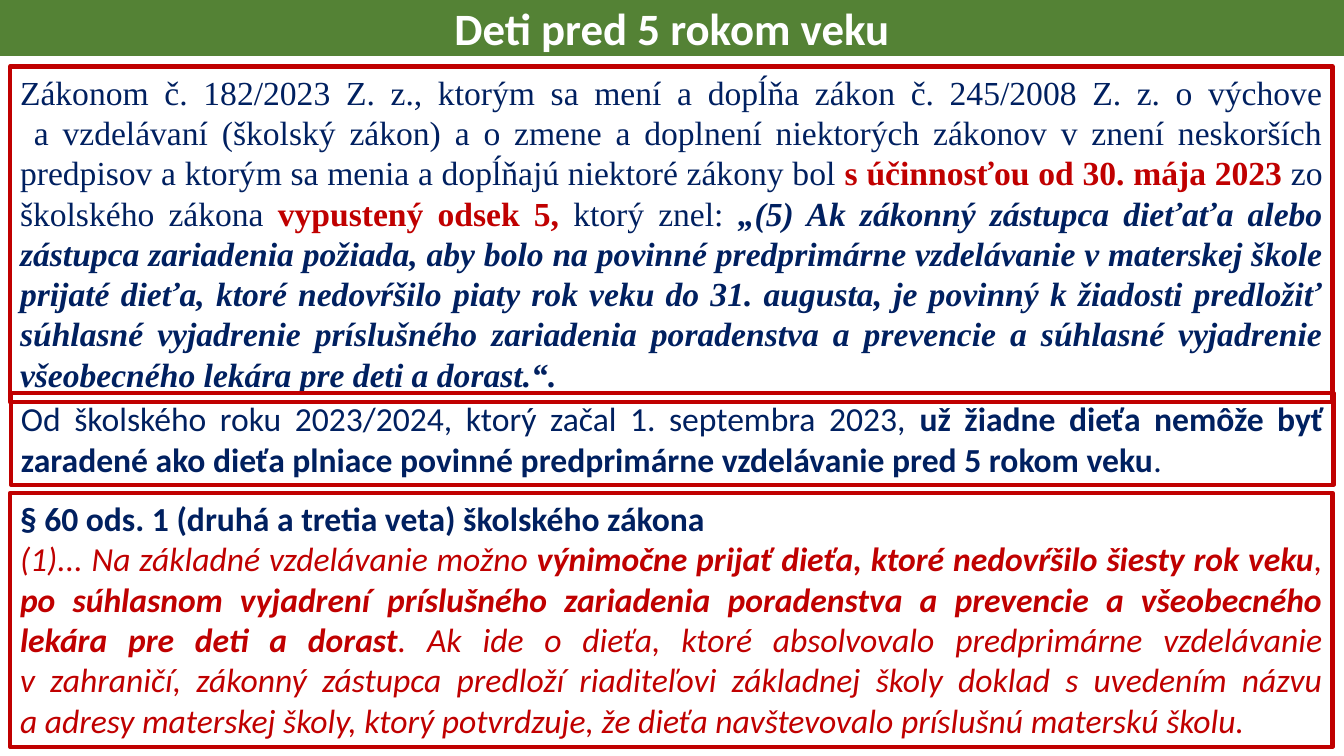
from dataclasses import dataclass

from pptx import Presentation
from pptx import util as u
from pptx.dml.color import RGBColor
from pptx.enum import text
from pptx.slide import Slide

COLORS = {"green": "548235", "red": "C00000", "navy": "002060", "white": "FFFFFF"}

# Character formats: values for the font attributes
PLAIN = {"bold": False, "italic": False}
BOLD = {"bold": True, "italic": False}
ITALIC = {"bold": False, "italic": True}
BOLD_ITALIC = {"bold": True, "italic": True}


@dataclass
class Passage:
    wording: str  # a newline stands for a line break
    color: str
    style: dict


@dataclass
class Panel:
    left: float
    top: float
    width: float
    height: float
    paragraphs: list[list[Passage]]
    font: str = "Calibri"
    size: float = 24
    align: text.PP_ALIGN = text.PP_ALIGN.JUSTIFY
    line: str = "red"
    line_width: float = 3
    fill: str | None = None
    side_inset: float = 7.2
    end_inset: float = 3.6


TITLE = Panel(
    -0.5, 0.7, 961, 38.9,
    [[Passage("Deti pred 5 rokom veku", "white", BOLD)]],
    size=32, align=text.PP_ALIGN.CENTER, line="green", line_width=0.75,
    fill="green", side_inset=5.76, end_inset=0,
)

AMENDMENT = Panel(
    7.2, 47.5, 944.6, 239.8,
    [[
        Passage("Zákonom č. 182/2023 Z. z., ktorým sa mení a dopĺňa zákon č. 245/2008 Z. z. "
                "o výchove\n a vzdelávaní (školský zákon) a o zmene a doplnení niektorých "
                "zákonov v znení neskorších predpisov a ktorým sa menia a dopĺňajú "
                "niektoré zákony bol ", "navy", PLAIN),
        Passage("s účinnosťou od 30. mája 2023 ", "red", BOLD),
        Passage("zo školského zákona ", "navy", PLAIN),
        Passage("vypustený odsek 5, ", "red", BOLD),
        Passage("ktorý znel: ", "navy", PLAIN),
        Passage("„(5) Ak zákonný zástupca dieťaťa alebo zástupca zariadenia požiada, aby bolo "
                "na povinné predprimárne vzdelávanie v materskej škole prijaté dieťa, ktoré "
                "nedovŕšilo piaty rok veku do 31. augusta, je povinný k žiadosti predložiť "
                "súhlasné vyjadrenie príslušného zariadenia poradenstva a prevencie a súhlasné "
                "vyjadrenie všeobecného lekára pre deti a dorast.“.", "navy", BOLD_ITALIC),
    ]],
    font="Times New Roman",
)

CONSEQUENCE = Panel(
    7.9, 280.8, 944.6, 65.5,
    [[
        Passage("Od školského roku 2023/2024, ktorý začal 1. septembra 2023, ", "navy", PLAIN),
        Passage("už žiadne dieťa nemôže byť zaradené ako dieťa plniace povinné predprimárne "
                "vzdelávanie pred 5 rokom veku", "navy", BOLD),
        Passage(".", "navy", PLAIN),
    ]],
)

SECTION_60 = Panel(
    7.2, 352.1, 944.6, 181.4,
    [
        [Passage("§ 60 ods. 1 (druhá a tretia veta) školského zákona", "navy", BOLD)],
        [
            Passage("(1)... Na základné vzdelávanie možno ", "red", ITALIC),
            Passage("výnimočne prijať dieťa, ktoré nedovŕšilo šiesty rok veku",
                    "red", BOLD_ITALIC),
            Passage(", ", "red", ITALIC),
            Passage("po súhlasnom vyjadrení príslušného zariadenia poradenstva a prevencie "
                    "a všeobecného lekára pre deti a dorast", "red", BOLD_ITALIC),
            Passage(". Ak ide o dieťa, ktoré absolvovalo predprimárne vzdelávanie\n"
                    "v zahraničí, zákonný zástupca predloží riaditeľovi základnej školy doklad "
                    "s uvedením názvu\na adresy materskej školy, ktorý potvrdzuje, že dieťa "
                    "navštevovalo príslušnú materskú školu.", "red", ITALIC),
        ],
    ],
)


def rgb(name: str) -> RGBColor:
    return RGBColor.from_string(COLORS[name])


def set_attributes(target, values: dict) -> None:
    for name, value in values.items():
        setattr(target, name, value)


def add_passage(paragraph, passage: Passage, panel: Panel) -> None:
    for index, wording in enumerate(passage.wording.split("\n")):
        if index:
            paragraph.add_line_break()
        run = paragraph.add_run()
        run.text = wording
        font_format = {"name": panel.font, "size": u.Pt(panel.size), **passage.style}
        set_attributes(run.font, font_format)
        run.font.color.rgb = rgb(passage.color)


def add_panel(slide: Slide, panel: Panel) -> None:
    bounds = (panel.left, panel.top, panel.width, panel.height)
    shape = slide.shapes.add_textbox(*(u.Pt(length) for length in bounds))

    # Outline and background
    shape.line.color.rgb = rgb(panel.line)
    shape.line.width = u.Pt(panel.line_width)
    if panel.fill:
        shape.fill.solid()
        shape.fill.fore_color.rgb = rgb(panel.fill)

    # Text
    frame = shape.text_frame
    set_attributes(frame, {
        "word_wrap": True,
        "auto_size": text.MSO_AUTO_SIZE.SHAPE_TO_FIT_TEXT,
        "vertical_anchor": text.MSO_ANCHOR.TOP,
        "margin_left": u.Pt(panel.side_inset),
        "margin_right": u.Pt(panel.side_inset),
        "margin_top": u.Pt(panel.end_inset),
        "margin_bottom": u.Pt(panel.end_inset),
    })
    for index, passages in enumerate(panel.paragraphs):
        paragraph = frame.add_paragraph() if index else frame.paragraphs[0]
        paragraph.alignment = panel.align
        for passage in passages:
            add_passage(paragraph, passage, panel)


def main() -> None:
    presentation = Presentation()
    presentation.slide_width = u.Pt(960)
    presentation.slide_height = u.Pt(540)
    slide = presentation.slides.add_slide(presentation.slide_layouts[6])
    for panel in (TITLE, AMENDMENT, CONSEQUENCE, SECTION_60):
        add_panel(slide, panel)
    presentation.save("out.pptx")


if __name__ == "__main__":
    main()
